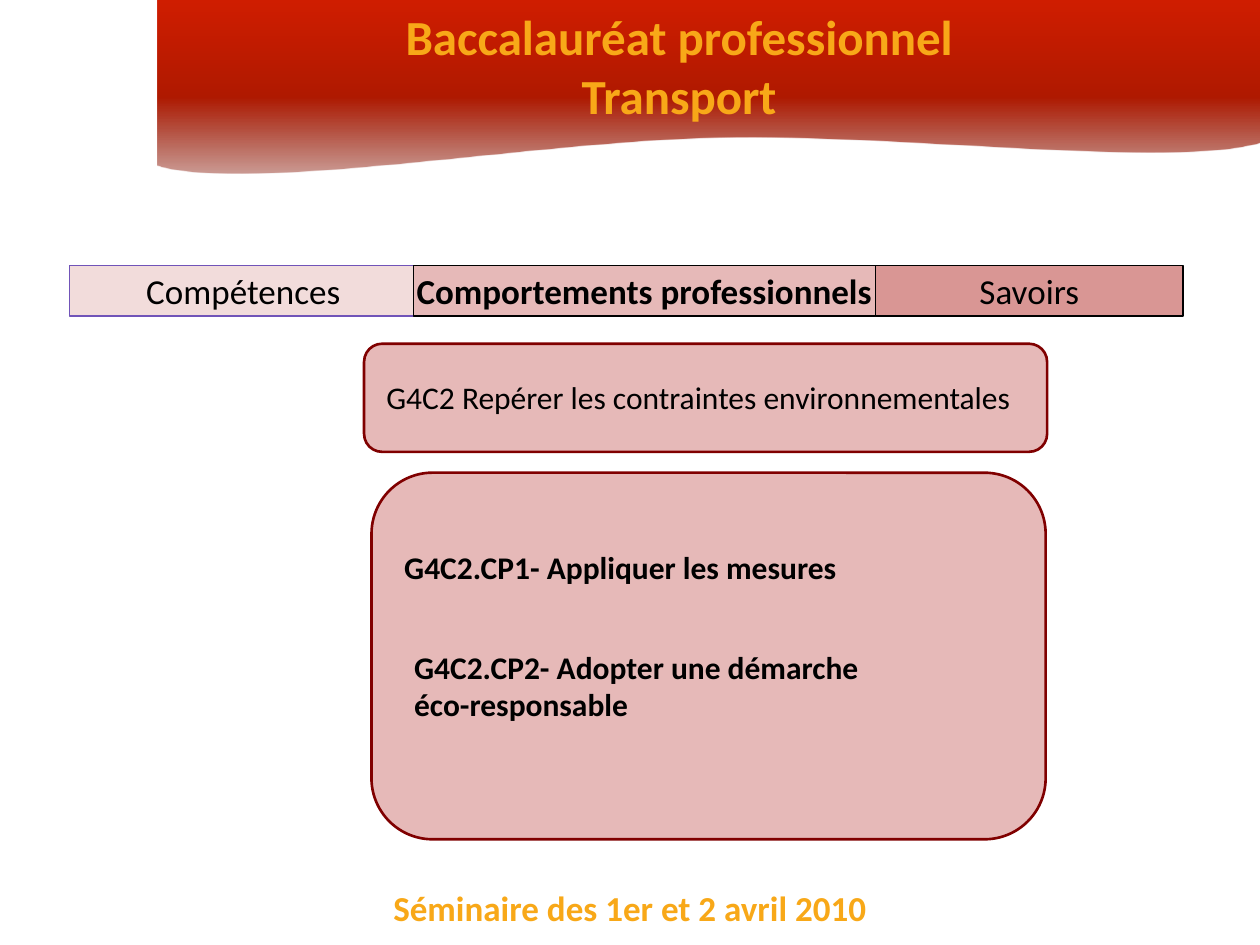
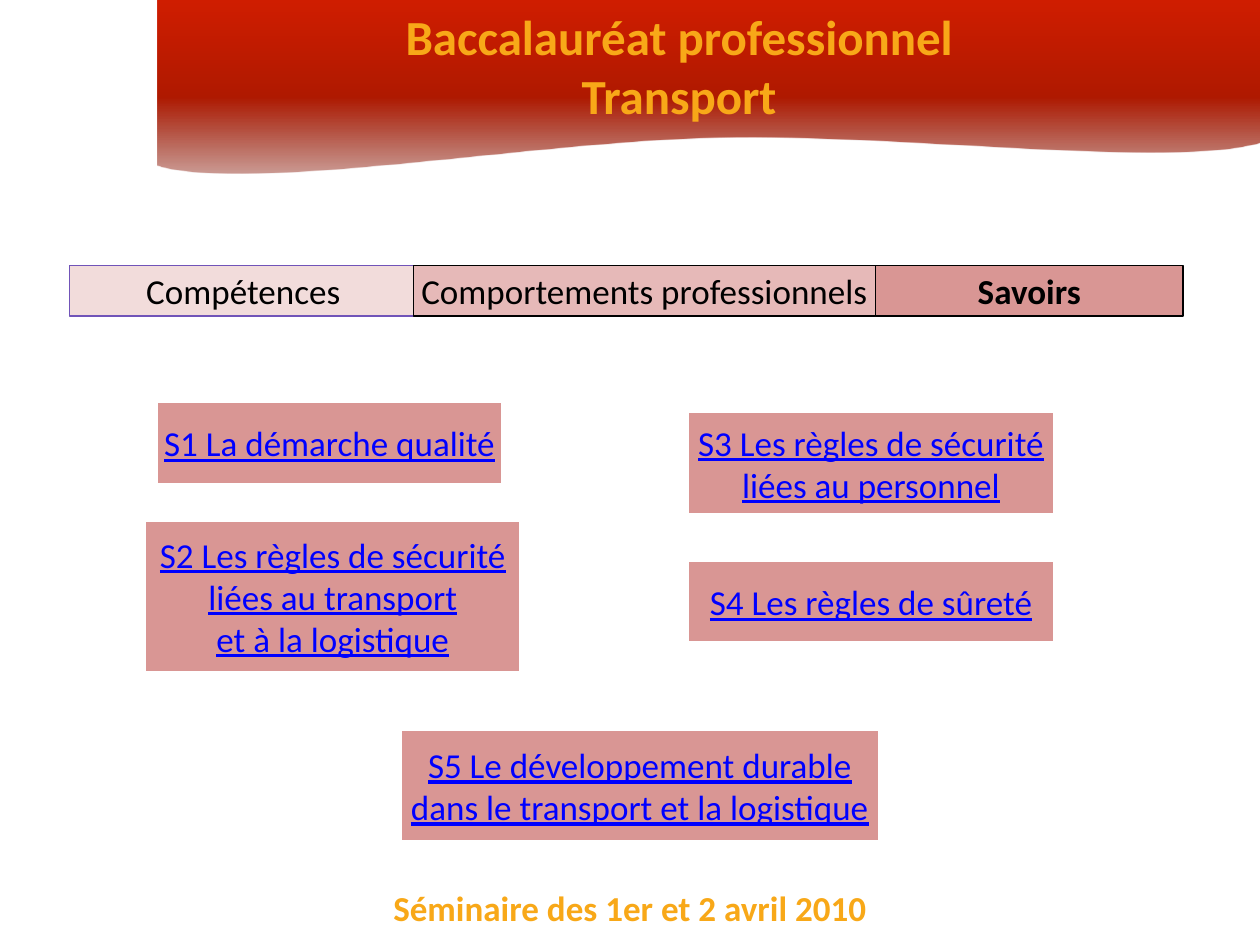
"""Builds two slides on the transport diploma: professional conduct, then knowledge."""
from dataclasses import dataclass
from typing import Optional

import pptx
import pptx.dml.color
import pptx.enum.shapes
import pptx.enum.text
import pptx.oxml
import pptx.oxml.ns
import pptx.presentation
import pptx.shapes.autoshape
import pptx.slide
import pptx.text.text
import pptx.util

Cm = pptx.util.Cm
Kind = pptx.enum.shapes.MSO_SHAPE
Side = pptx.enum.text.PP_ALIGN
Hold = pptx.enum.text.MSO_ANCHOR
qn = pptx.oxml.ns.qn


@dataclass(frozen=True)
class Theme:
    """Colours, font and type sizes of the deck."""
    font: str = "Calibri"
    gold: str = "F8A818"
    ink: str = "000000"
    link: str = "0000FF"
    pale: str = "F2DCDB"
    rose: str = "E6B9B8"
    deep: str = "D99694"
    wine: str = "800000"
    violet: str = "7154B8"
    fade: tuple = ((0, "7B1100", 27), (50, "AF1900", 100), (100, "D01D00", 100))
    head: int = 28
    label: int = 20
    note: int = 18


THEME = Theme()


@dataclass(frozen=True)
class Style:
    """How a text is set."""
    size: int = THEME.label
    color: str = THEME.ink
    bold: bool = False
    under: bool = False
    side: Side = Side.CENTER
    hold: Hold = Hold.MIDDLE
    wrap: bool = False


@dataclass(frozen=True)
class Box:
    """A filled box, placed in centimetres, with optional lines of text."""
    left: float
    top: float
    width: float
    height: float
    fill: str
    lines: tuple[str, ...] = ()
    style: Style = Style()
    kind: Kind = Kind.FLOWCHART_PROCESS
    edge: Optional[str] = None
    weight: float = 0.75


@dataclass(frozen=True)
class Tab:
    """One heading of the row of tabs."""
    name: str
    left: float
    width: float
    fill: str
    edge: str = THEME.ink


TITLE = ("Baccalauréat professionnel", "Transport")
DATE = ("Séminaire des 1er et 2 avril 2010",)
BAND = ((3.18, 0), (25.4, 0), (25.4, 2.87),
        (23.6, 3.4), (18.19, 2.69), (14.48, 2.77),
        (10.77, 2.84), (5.05, 3.89), (3.18, 3.33))
TABS = (Tab("Savoirs", 17.65, 6.2, THEME.deep),
        Tab("Compétences", 1.4, 7.01, THEME.pale, THEME.violet),
        Tab("Comportements professionnels", 8.33, 9.32, THEME.rose))


def rgb(color: str) -> pptx.dml.color.RGBColor:
    """Turn a hex string into a colour."""
    return pptx.dml.color.RGBColor.from_string(color)


def write(frame: pptx.text.text.TextFrame, lines: tuple[str, ...], style: Style) -> None:
    """Fill a text frame, one paragraph a line."""
    frame.word_wrap = style.wrap
    frame.auto_size = pptx.enum.text.MSO_AUTO_SIZE.NONE
    frame.vertical_anchor = style.hold
    for i, line in enumerate(lines):
        para = frame.add_paragraph() if i else frame.paragraphs[0]
        para.alignment = style.side
        run = para.add_run()
        run.text = line
        font = run.font
        font.name, font.size = THEME.font, pptx.util.Pt(style.size)
        font.bold, font.underline = style.bold, style.under
        font.color.rgb = rgb(style.color)


def draw(slide: pptx.slide.Slide, box: Box) -> None:
    """Draw one box."""
    shape = slide.shapes.add_shape(
        box.kind, Cm(box.left), Cm(box.top), Cm(box.width), Cm(box.height))
    shape.shadow.inherit = False
    shape.fill.solid()
    shape.fill.fore_color.rgb = rgb(box.fill)
    if box.edge:
        shape.line.color.rgb = rgb(box.edge)
        shape.line.width = pptx.util.Pt(box.weight)
    else:
        shape.line.fill.background()
    if box.lines:
        write(shape.text_frame, box.lines, box.style)


def curve(shape: pptx.shapes.autoshape.Shape) -> None:
    """Bend each three segments after the top and right edges into one curve."""
    legs = list(shape._element.iter(qn("a:lnTo")))[2:8]
    for i in range(0, len(legs), 3):
        bend = pptx.oxml.parse_xml(f"<a:cubicBezTo {pptx.oxml.ns.nsdecls('a')}/>")
        legs[i].addprevious(bend)
        for leg in legs[i:i + 3]:
            bend.append(leg[0])
            leg.getparent().remove(leg)


def blend(shape: pptx.shapes.autoshape.Shape) -> None:
    """Give a shape the fading red fill."""
    stops = "".join(
        f'<a:gs pos="{pos * 1000}"><a:srgbClr val="{color}">'
        f'<a:alpha val="{alpha * 1000}"/></a:srgbClr></a:gs>'
        for pos, color, alpha in THEME.fade)
    grad = pptx.oxml.parse_xml(
        f'<a:gradFill {pptx.oxml.ns.nsdecls("a")} rotWithShape="1"><a:gsLst>{stops}'
        '</a:gsLst><a:lin ang="16200000" scaled="0"/></a:gradFill>')
    shape.fill.background()
    props = shape._element.spPr
    props.replace(props.find(qn("a:noFill")), grad)


def band(slide: pptx.slide.Slide) -> None:
    """Draw the wavy red band behind everything else."""
    first, *rest = [(Cm(x), Cm(y)) for x, y in BAND]
    pen = slide.shapes.build_freeform(*first)
    pen.add_line_segments(rest, close=True)
    shape = pen.convert_to_shape()
    shape.shadow.inherit = False
    shape.line.fill.background()
    curve(shape)
    blend(shape)
    slide.shapes._spTree.insert(2, shape._element)


def page(deck: pptx.presentation.Presentation, topic: str, boxes: tuple[Box, ...]) -> None:
    """Add a slide with the shared parts, the tabs and its own boxes."""
    slide = deck.slides.add_slide(deck.slide_layouts[5])
    band(slide)
    title = slide.shapes.title
    title.left, title.top, title.width, title.height = Cm(7.34), Cm(0), Cm(12.7), Cm(2.64)
    write(title.text_frame, TITLE,
          Style(THEME.head, THEME.gold, bold=True, hold=Hold.TOP, wrap=True))
    foot = slide.shapes.add_textbox(Cm(6.35), Cm(17.75), Cm(12.7), Cm(1.12))
    write(foot.text_frame, DATE,
          Style(color=THEME.gold, bold=True, hold=Hold.TOP, wrap=True))
    for tab in TABS:
        draw(slide, Box(tab.left, 5.36, tab.width, 1.01, tab.fill, (tab.name,),
                        Style(bold=tab.name == topic), edge=tab.edge))
    for box in boxes:
        draw(slide, box)


def panel(left: float, top: float, width: float, height: float) -> Box:
    """Describe a rounded panel with a dark edge."""
    return Box(left, top, width, height, THEME.rose,
               kind=Kind.FLOWCHART_ALTERNATE_PROCESS, edge=THEME.wine, weight=1.5)


def note(left: float, top: float, width: float, height: float,
         *lines: str, bold: bool = True) -> Box:
    """Describe a text laid on a panel."""
    style = Style(THEME.note, bold=bold, side=Side.LEFT, hold=Hold.TOP)
    return Box(left, top, width, height, THEME.rose, lines, style, Kind.RECTANGLE)


def topic(left: float, top: float, width: float, height: float, *lines: str) -> Box:
    """Describe a field of knowledge, set like a link."""
    return Box(left, top, width, height, THEME.deep, lines,
               Style(color=THEME.link, under=True))


def main() -> None:
    """Build the deck and save it."""
    deck = pptx.Presentation()
    deck.slide_width, deck.slide_height = Cm(25.4), Cm(19.05)
    page(deck, "Comportements professionnels", (
        panel(7.34, 6.93, 13.77, 2.18),
        note(7.54, 7.49, 13.21, 1.02,
             "G4C2 Repérer les contraintes environnementales", bold=False),
        panel(7.49, 9.53, 13.59, 7.39),
        note(7.9, 10.92, 9.22, 1.02, "G4C2.CP1- Appliquer les mesures"),
        note(8.1, 12.93, 9.47, 1.78,
             "G4C2.CP2- Adopter une démarche", "éco-responsable")))
    page(deck, "Savoirs", (
        topic(3.18, 8.13, 6.93, 1.6, "S1 La démarche qualité"),
        topic(8.1, 14.73, 9.6, 2.21,
              "S5 Le développement durable", "dans le transport et la logistique"),
        topic(2.95, 10.52, 7.52, 3,
              "S2 Les règles de sécurité", "liées au transport", "et à la logistique"),
        topic(13.89, 8.33, 7.34, 2.01,
              "S3 Les règles de sécurité", "liées au personnel"),
        topic(13.89, 11.33, 7.34, 1.6, "S4 Les règles de sûreté")))
    deck.save("out.pptx")


if __name__ == "__main__":
    main()
